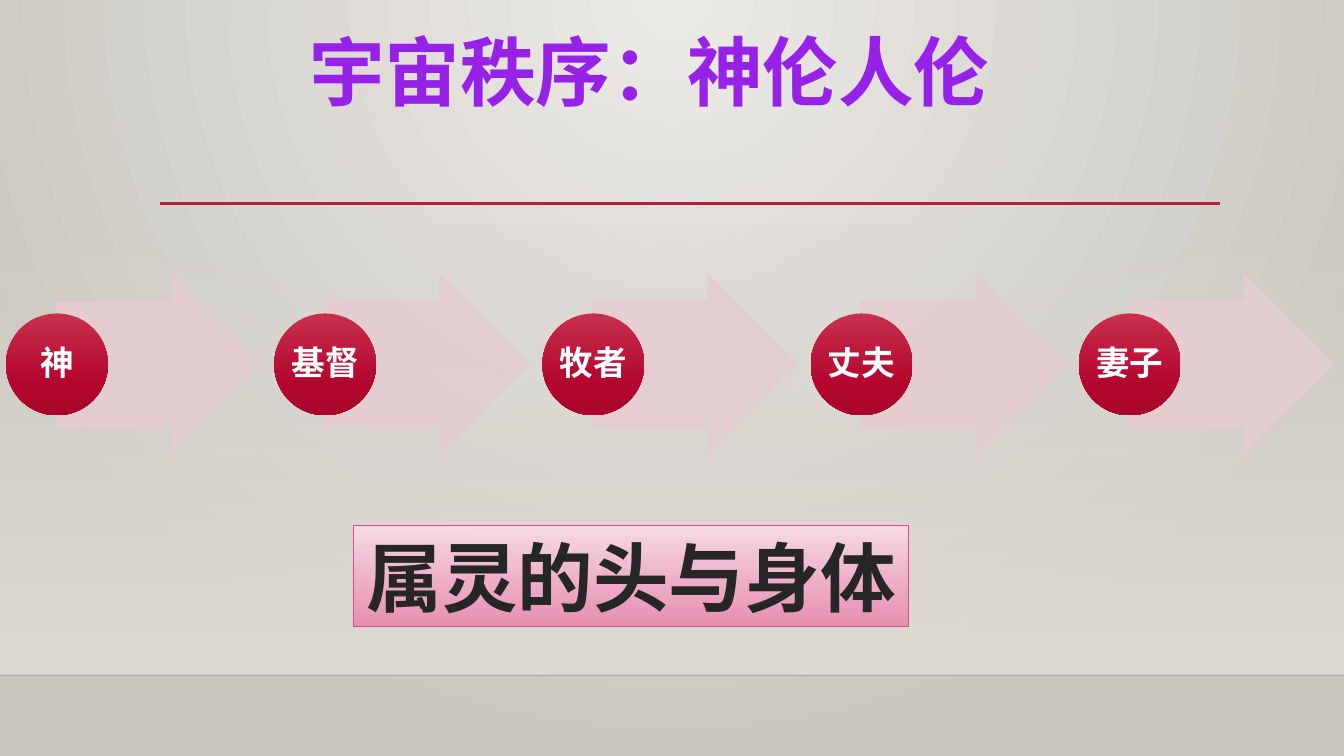
"""Build the slide on the order of heaven and of man."""
import pptx
import pptx.util
import pptx.dml.color
import pptx.enum.shapes
import pptx.enum.text
import pptx.oxml
import pptx.oxml.ns
from pptx.util import Inches

TITLE = "宇宙秩序：神伦人伦"
STEPS = ["神", "基督", "牧者", "丈夫", "妻子"]
MOTTO = "属灵的头与身体"

THEME = {
    "back": [(0, "ECEAE7", 100), (100, "CAC7C1", 100)],
    "wall": [(0, "DFDBD5", 0), (100, "DFDBD5", 100)],
    "ball": [(0, "C7304C", 100), (69, "B3062F", 100), (100, "AA062C", 100)],
    "motto": [(0, "F7DCE5", 100), (100, "EA8AAE", 92)],
    "floor": "000001", "rule": "B71E42", "arrow": "E6CDCF", "edge": "DE478E",
    "title": "9622E7", "label": "FFFFFF", "dark": "262626",
    "big": 54, "small": 24, "han": "Noto Sans CJK SC", "latin": "Calibri",
}
KIND = pptx.enum.shapes.MSO_SHAPE
MID = pptx.enum.text.MSO_ANCHOR.MIDDLE
CENTER = pptx.enum.text.PP_ALIGN.CENTER
NS = pptx.oxml.ns.nsdecls("a")
qn = pptx.oxml.ns.qn


def color(name):
    return pptx.dml.color.RGBColor.from_string(name)


def blend(fill, root, stops, shade='<a:lin ang="5400000" scaled="0"/>'):
    fill.gradient()
    marks = "".join(
        f'<a:gs pos="{pos * 1000}"><a:srgbClr val="{tint}">'
        f'<a:alpha val="{alpha * 1000}"/></a:srgbClr></a:gs>'
        for pos, tint, alpha in stops)
    old = next(root.iter(qn("a:gradFill")))
    new = pptx.oxml.parse_xml(
        f'<a:gradFill {NS} rotWithShape="1"><a:gsLst>{marks}</a:gsLst>{shade}</a:gradFill>')
    old.getparent().replace(old, new)


def fade(root, alpha):
    for tint in root.iter(qn("a:srgbClr")):
        tint.append(pptx.oxml.parse_xml(f'<a:alpha {NS} val="{alpha * 1000}"/>'))


def shape(slide, kind, *box):
    item = slide.shapes.add_shape(kind, *map(Inches, box))
    item.shadow.inherit = False
    item.line.fill.background()
    return item


def edge(item, tint, width):
    item.line.color.rgb = color(tint)
    item.line.width = pptx.util.Pt(width)


def rule(slide, left, right, top, tint, width):
    item = slide.shapes.add_connector(
        pptx.enum.shapes.MSO_CONNECTOR.STRAIGHT, *map(Inches, (left, top, right, top)))
    edge(item, tint, width)
    item.element.spPr.append(pptx.oxml.parse_xml(f"<a:effectLst {NS}/>"))
    return item


def write(item, text, size, font, tint, space=1.0):
    frame = item.text_frame
    frame.text = text
    frame.vertical_anchor = MID
    line = frame.paragraphs[0]
    line.alignment = CENTER
    line.line_spacing = space
    run = line.runs[0]
    run.font.size = pptx.util.Pt(size)
    run.font.bold = True
    run.font.color.rgb = color(tint)
    run.font.name = font
    run.font._element.append(
        pptx.oxml.parse_xml(f'<a:ea {NS} typeface="{THEME["han"]}"/>'))


def scene(slide):
    fill = slide.background.fill
    fill.gradient()
    blend(fill, slide.element, THEME["back"],
          '<a:path path="circle"><a:fillToRect l="43000" t="0" r="43000" b="100000"/></a:path>')
    wall = shape(slide, KIND.RECTANGLE, 0, 2.21, 13.33, 4.49)
    blend(wall.fill, wall.element, THEME["wall"])
    floor = rule(slide, 0, 13.33, 6.7, THEME["floor"], 1)
    fade(floor.element, 20)
    rule(slide, 1.59, 12.1, 2.02, THEME["rule"], 2.5)


def step(slide, left, label):
    arrow = shape(slide, KIND.RIGHT_ARROW, left + 0.5, 2.73, 2.03, 1.77)
    arrow.adjustments[0] = 0.7
    arrow.adjustments[1] = 0.5
    arrow.fill.solid()
    arrow.fill.fore_color.rgb = color(THEME["arrow"])
    edge(arrow, THEME["arrow"], 0.75)
    fade(arrow.element, 90)
    ball = shape(slide, KIND.OVAL, left, 3.11, 1.01, 1.01)
    blend(ball.fill, ball.element, THEME["ball"])
    frame = ball.text_frame
    frame.margin_left = frame.margin_right = Inches(0.02)
    frame.margin_top = frame.margin_bottom = Inches(0.02)
    frame.word_wrap = False
    write(ball, label, THEME["small"], THEME["latin"], THEME["label"], 0.9)


def main():
    deck = pptx.Presentation()
    deck.slide_width, deck.slide_height = Inches(13.33), Inches(7.5)
    slide = deck.slides.add_slide(deck.slide_layouts[6])
    scene(slide)
    title = slide.shapes.add_textbox(*map(Inches, (1.65, 0.37, 9.58, 0.77)))
    title.text_frame.word_wrap = True
    write(title, TITLE, THEME["big"], THEME["han"], THEME["title"], 0.9)
    for index, label in enumerate(STEPS):
        step(slide, 0.06 + 2.66 * index, label)
    motto = shape(slide, KIND.RECTANGLE, 3.51, 5.21, 5.5, 1.01)
    blend(motto.fill, motto.element, THEME["motto"])
    edge(motto, THEME["edge"], 0.75)
    motto.text_frame.word_wrap = False
    write(motto, MOTTO, THEME["big"], THEME["han"], THEME["dark"])
    deck.save("out.pptx")


if __name__ == "__main__":
    main()
